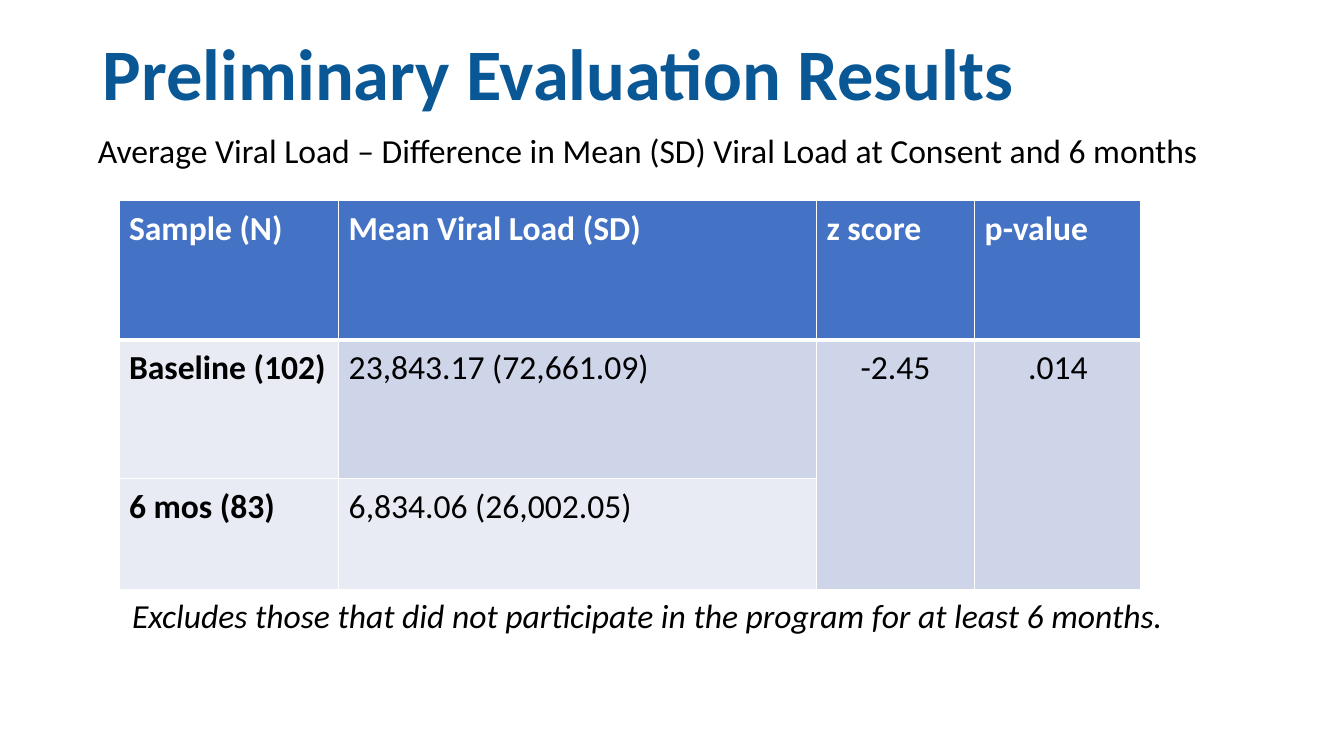
from dataclasses import dataclass

from lxml.etree import SubElement
from pptx import Presentation
from pptx.dml.color import RGBColor
from pptx.enum.text import MSO_ANCHOR as Anchor
from pptx.enum.text import MSO_AUTO_SIZE as AutoSize
from pptx.enum.text import PP_ALIGN as Align
from pptx.oxml.ns import qn
from pptx.util import Emu, Inches, Pt

COLOURS = {
    "title": "095895",
    "text": "000000",
    "white": "FFFFFF",
    "header": "4472C4",
    "pale": "E8EBF4",
    "band": "CFD5E9",
}
COLUMNS, ROWS = 160, 90
UNIT = Inches(7.5) / ROWS
THIN, THICK = 0.96, 3
COLUMN_WIDTHS = (26.16, 56.88, 18.84, 19.8)
ROW_HEIGHTS = (16.56, 16.56, 13.2)


@dataclass(frozen=True)
class Area:
    left: float
    top: float
    width: float
    height: float


@dataclass(frozen=True)
class Style:
    size: float = 24
    colour: str = "text"
    bold: bool = False
    italic: bool = False
    spacing: float = 1.0
    align: Align = Align.LEFT


@dataclass(frozen=True)
class Entry:
    row: int
    column: int
    text: str
    fill: str
    style: Style
    row_span: int = 1


TITLE_AREA = Area(11.04, 3.72, 138, 10.92)
BODY_AREA = Area(7.68, 15.36, 149.04, 60.84)
TABLE_AREA = Area(14.16, 23.88, sum(COLUMN_WIDTHS), sum(ROW_HEIGHTS))
NOTE_AREA = Area(14.16, 70.08, 129.36, 6.36)

HEADER = Style(colour="white", bold=True, spacing=1.07)
LABEL = Style(bold=True, spacing=1.07)
VALUE = Style(spacing=1.07)
SCORE = Style(spacing=1.07, align=Align.CENTER)

HEADINGS = ("Sample (N)", "Mean Viral Load (SD)", "z score", "p-value")
ENTRIES = [
    *(Entry(0, column, text, "header", HEADER) for column, text in enumerate(HEADINGS)),
    Entry(1, 0, "Baseline (102)", "pale", LABEL),
    Entry(1, 1, "23,843.17 (72,661.09)", "band", VALUE),
    Entry(1, 2, "-2.45", "band", SCORE, 2),
    Entry(1, 3, ".014", "band", SCORE, 2),
    Entry(2, 0, "6 mos (83)", "pale", LABEL),
    Entry(2, 1, "6,834.06 (26,002.05)", "pale", VALUE),
]


def grid(units: float) -> Emu:
    return Emu(round(units * UNIT))


def place(shape, area: Area) -> None:
    for name in ("left", "top", "width", "height"):
        setattr(shape, name, grid(getattr(area, name)))


def apply(target, values: dict) -> None:
    for name, value in values.items():
        setattr(target, name, value)


def write(frame, text: str, style: Style) -> None:
    para = frame.paragraphs[0]
    apply(para, {
        "alignment": style.align,
        "line_spacing": style.spacing,
        "space_before": Pt(0),
    })
    span = para.add_run()
    span.text = text
    apply(span.font, {
        "name": "Calibri",
        "size": Pt(style.size),
        "bold": style.bold,
        "italic": style.italic,
    })
    span.font.color.rgb = RGBColor.from_string(COLOURS[style.colour])


def add_borders(cell, row: int) -> None:
    properties = cell._tc.get_or_add_tcPr()
    widths = {
        "a:lnL": THIN,
        "a:lnR": THIN,
        "a:lnT": THICK if row == 1 else THIN,
        "a:lnB": THICK if row == 0 else THIN,
    }
    for tag, width in widths.items():
        line = SubElement(properties, qn(tag), w=str(Pt(width)))
        fill = SubElement(line, qn("a:solidFill"))
        SubElement(fill, qn("a:srgbClr"), val=COLOURS["white"])


def add_results_table(page) -> None:
    area = TABLE_AREA
    bounds = map(grid, (area.left, area.top, area.width, area.height))
    table = page.shapes.add_table(len(ROW_HEIGHTS), len(COLUMN_WIDTHS), *bounds).table
    for column, width in zip(table.columns, COLUMN_WIDTHS):
        column.width = grid(width)
    for row, height in zip(table.rows, ROW_HEIGHTS):
        row.height = grid(height)
    for entry in ENTRIES:
        last_row = entry.row + entry.row_span
        cells = [table.cell(row, entry.column) for row in range(entry.row, last_row)]
        if entry.row_span > 1:
            cells[0].merge(cells[-1])
        for row, cell in enumerate(cells, entry.row):
            add_borders(cell, row)
            cell.fill.solid()
            cell.fill.fore_color.rgb = RGBColor.from_string(COLOURS[entry.fill])
        write(cells[0].text_frame, entry.text, entry.style)


def add_heading(page) -> None:
    title, body = page.shapes.title, page.placeholders[1]
    place(title, TITLE_AREA)
    place(body, BODY_AREA)
    for box, anchor in ((title, Anchor.MIDDLE), (body, Anchor.TOP)):
        apply(box.text_frame, {
            "word_wrap": True,
            "auto_size": AutoSize.NONE,
            "vertical_anchor": anchor,
        })
    write(title.text_frame, "Preliminary Evaluation Results",
          Style(size=51.8, colour="title", bold=True, spacing=0.9))
    properties = body.text_frame.paragraphs[0]._p.get_or_add_pPr()
    properties.set("marL", str(Inches(0.23)))
    properties.set("indent", "0")
    SubElement(properties, qn("a:buNone"))
    write(body.text_frame,
          "Average Viral Load – Difference in Mean (SD) Viral Load at Consent and 6 months",
          Style(spacing=0.9))


def add_note(page) -> None:
    box = page.shapes.add_textbox(0, 0, 0, 0)
    place(box, NOTE_AREA)
    apply(box.text_frame, {
        "word_wrap": True,
        "vertical_anchor": Anchor.MIDDLE,
        "margin_left": Inches(0.13),
        "margin_right": Inches(0.13),
        "margin_top": Inches(0.07),
        "margin_bottom": Inches(0.07),
    })
    write(box.text_frame,
          "Excludes those that did not participate in the program for at least 6 months.",
          Style(italic=True))


def main() -> None:
    deck = Presentation()
    apply(deck, {"slide_width": grid(COLUMNS), "slide_height": grid(ROWS)})
    page = deck.slides.add_slide(deck.slide_layouts[1])
    add_heading(page)
    add_results_table(page)
    add_note(page)
    deck.save("out.pptx")


if __name__ == "__main__":
    main()
